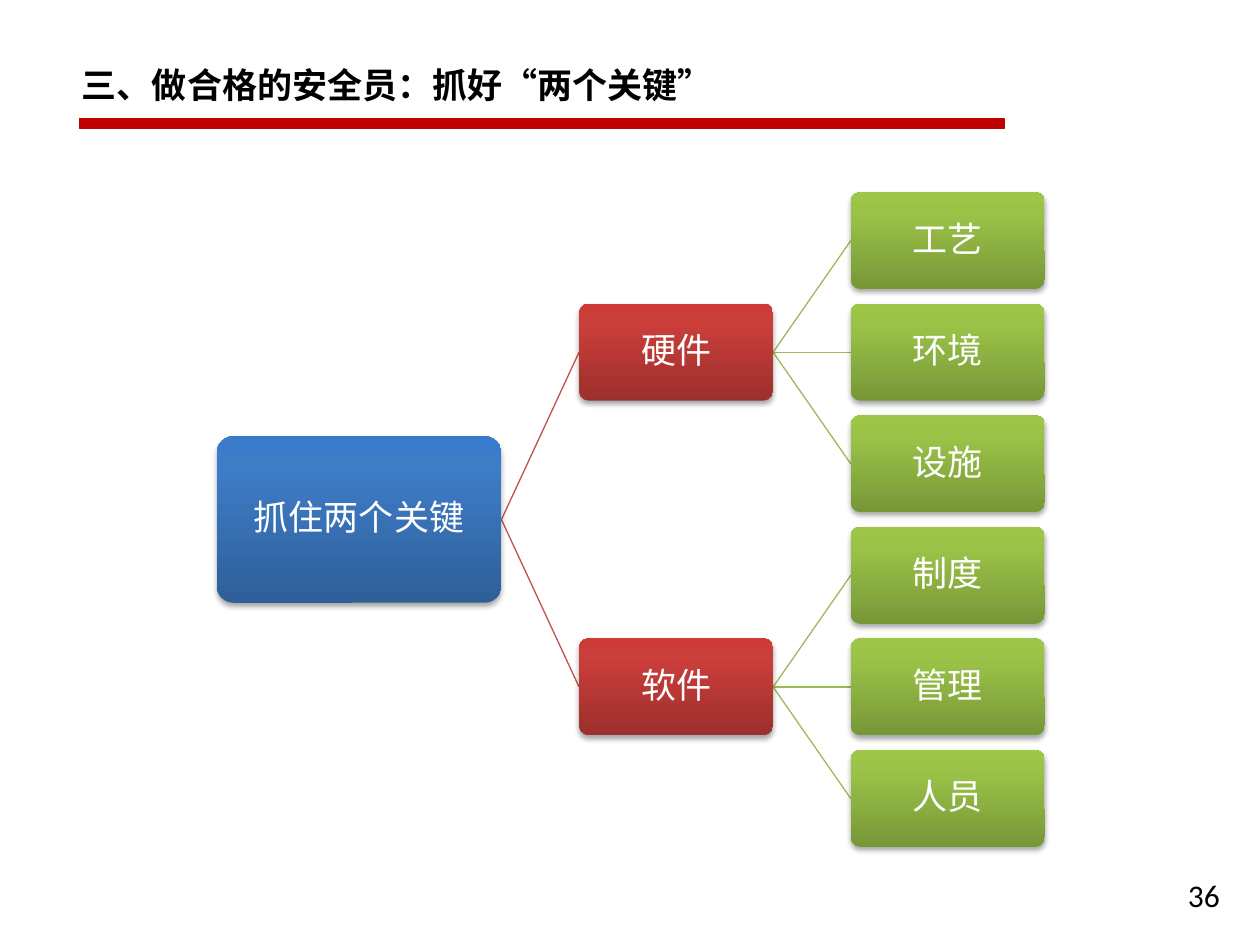
import pptx
import pptx.util
import pptx.dml.color
import pptx.enum.shapes
import pptx.enum.text
import pptx.oxml
import pptx.oxml.ns
from copy import deepcopy

Inches, Pt = pptx.util.Inches, pptx.util.Pt
RGB = pptx.dml.color.RGBColor.from_string
MSO_SHAPE = pptx.enum.shapes.MSO_SHAPE
ALIGN, ANCHOR = pptx.enum.text.PP_ALIGN, pptx.enum.text.MSO_ANCHOR
qn = pptx.oxml.ns.qn

THEME = {
    "cjk": "Noto Sans CJK SC", "latin": "Calibri",
    "text_size": 20, "number_size": 18,
    "ink": "000000", "label": "FFFFFF", "bar": "C00000",
    # Gradient stops run from the bottom edge to the top edge
    "stops": (0, 0.8, 1),
    "root": ("2F5F99", "3D7CC7", "3A7CCB"),
    "branch": ("9C2F2D", "CB3E3A", "CE3B37"),
    "leaf": ("779737", "9BC348", "9DC746"),
    "branch_line": "C0504D", "leaf_line": "9BBB59",
}
SHADOW = pptx.oxml.parse_xml(
    '<a:outerShdw xmlns:a="http://schemas.openxmlformats.org/drawingml/2006/main"'
    ' blurRad="40000" dist="23000" dir="5400000" rotWithShape="0">'
    '<a:srgbClr val="000000"><a:alpha val="35000"/></a:srgbClr></a:outerShdw>')


def write(s, text, font, size, color, bold=False, frame=None, para=None):
    """Put one formatted paragraph into a shape."""
    tf = s.text_frame
    p = tf.paragraphs[0]
    for target, values in ((tf, frame or {}), (p, para or {})):
        for name, value in values.items():
            setattr(target, name, value)
    r = p.add_run()
    r.text = text
    for name, value in {"name": font, "size": Pt(size), "bold": bold}.items():
        setattr(r.font, name, value)
    r.font.color.rgb = RGB(color)
    ea = r.font._element.makeelement(qn("a:ea"), {"typeface": font})
    r.font._element.append(ea)
    return p


def add_box(x, mid_y, w, h, text, colors):
    """Add a labelled gradient box, centred vertically on mid_y."""
    s = shapes.add_shape(MSO_SHAPE.ROUNDED_RECTANGLE, Inches(x),
                         Inches(mid_y - h / 2), Inches(w), Inches(h))
    s.adjustments[0] = 0.1
    s.fill.gradient()
    s.fill.gradient_angle = 90
    first = s.fill.gradient_stops[0]._gs
    first.addnext(deepcopy(first))
    for stop, position, color in zip(s.fill.gradient_stops, THEME["stops"], colors):
        stop.position = position
        stop.color.rgb = RGB(color)
    s.line.fill.background()
    s.shadow.inherit = False
    s._element.spPr.find(qn("a:effectLst")).append(deepcopy(SHADOW))
    inset = Inches(0.03)
    write(s, text, THEME["cjk"], THEME["text_size"], THEME["label"],
          frame={"word_wrap": True, "vertical_anchor": ANCHOR.MIDDLE,
                 "margin_left": inset, "margin_right": inset,
                 "margin_top": inset, "margin_bottom": inset},
          para={"alignment": ALIGN.CENTER, "line_spacing": 0.9})


prs = pptx.Presentation()
prs.slide_width, prs.slide_height = Inches(10), Inches(7.5)
slide = prs.slides.add_slide(prs.slide_layouts[5])
shapes = slide.shapes

# Title
s = shapes.title
s.left, s.top, s.width, s.height = map(Inches, (0.55, 0.31, 5.46, 0.55))
write(s, "三、做合格的安全员：抓好“两个关键”", THEME["cjk"], THEME["text_size"],
      THEME["ink"], bold=True,
      frame={"word_wrap": True, "vertical_anchor": ANCHOR.MIDDLE,
             "auto_size": pptx.enum.text.MSO_AUTO_SIZE.NONE},
      para={"alignment": ALIGN.LEFT, "line_spacing": 1.5})

# Red bar below the title
s = shapes.add_shape(MSO_SHAPE.RECTANGLE, *map(Inches, (0.63, 0.94, 7.34, 0.08)))
s.fill.solid()
s.fill.fore_color.rgb = RGB(THEME["bar"])
s.line.color.rgb = RGB(THEME["bar"])
s.line.width = Pt(0.75)
s.shadow.inherit = False

# Page number
s = shapes.add_textbox(*map(Inches, (9.33, 6.9, 0.63, 0.4)))
write(s, "36", THEME["latin"], THEME["number_size"], THEME["ink"],
      frame={"word_wrap": True})

# Tree grid: all steps follow from the height of one box
BOX_H = 0.77
BOX_W = 2 * BOX_H
GAP = 0.8 * BOX_H
ROW = 1.15 * BOX_H
ROOT_X, ROOT_W, ROOT_H = 1.72, 2.26, 1.32
BRANCH_X = ROOT_X + ROOT_W + GAP
LEAF_X = BRANCH_X + BOX_W + GAP
FIRST_Y = 1.91

tree = {"硬件": ("工艺", "环境", "设施"), "软件": ("制度", "管理", "人员")}
row_count = sum(len(leaves) for leaves in tree.values())
root_y = FIRST_Y + (row_count - 1) / 2 * ROW

# Collect the boxes and links of the tree
boxes = [(ROOT_X, root_y, ROOT_W, ROOT_H, "抓住两个关键", THEME["root"])]
links = []
row = 0
for branch, leaves in tree.items():
    branch_y = FIRST_Y + (row + (len(leaves) - 1) / 2) * ROW
    boxes.append((BRANCH_X, branch_y, BOX_W, BOX_H, branch, THEME["branch"]))
    links.append((ROOT_X + ROOT_W, root_y, BRANCH_X, branch_y, THEME["branch_line"]))
    for leaf in leaves:
        leaf_y = FIRST_Y + row * ROW
        boxes.append((LEAF_X, leaf_y, BOX_W, BOX_H, leaf, THEME["leaf"]))
        links.append((BRANCH_X + BOX_W, branch_y, LEAF_X, leaf_y, THEME["leaf_line"]))
        row += 1

# Links lie behind the boxes
for *ends, color in links:
    s = shapes.add_connector(pptx.enum.shapes.MSO_CONNECTOR.STRAIGHT, *map(Inches, ends))
    s.line.color.rgb = RGB(color)
    s.line.width = Pt(0.75)
    spPr = s._element.spPr
    spPr.append(spPr.makeelement(qn("a:effectLst"), {}))
for box in boxes:
    add_box(*box)

prs.save("out.pptx")
